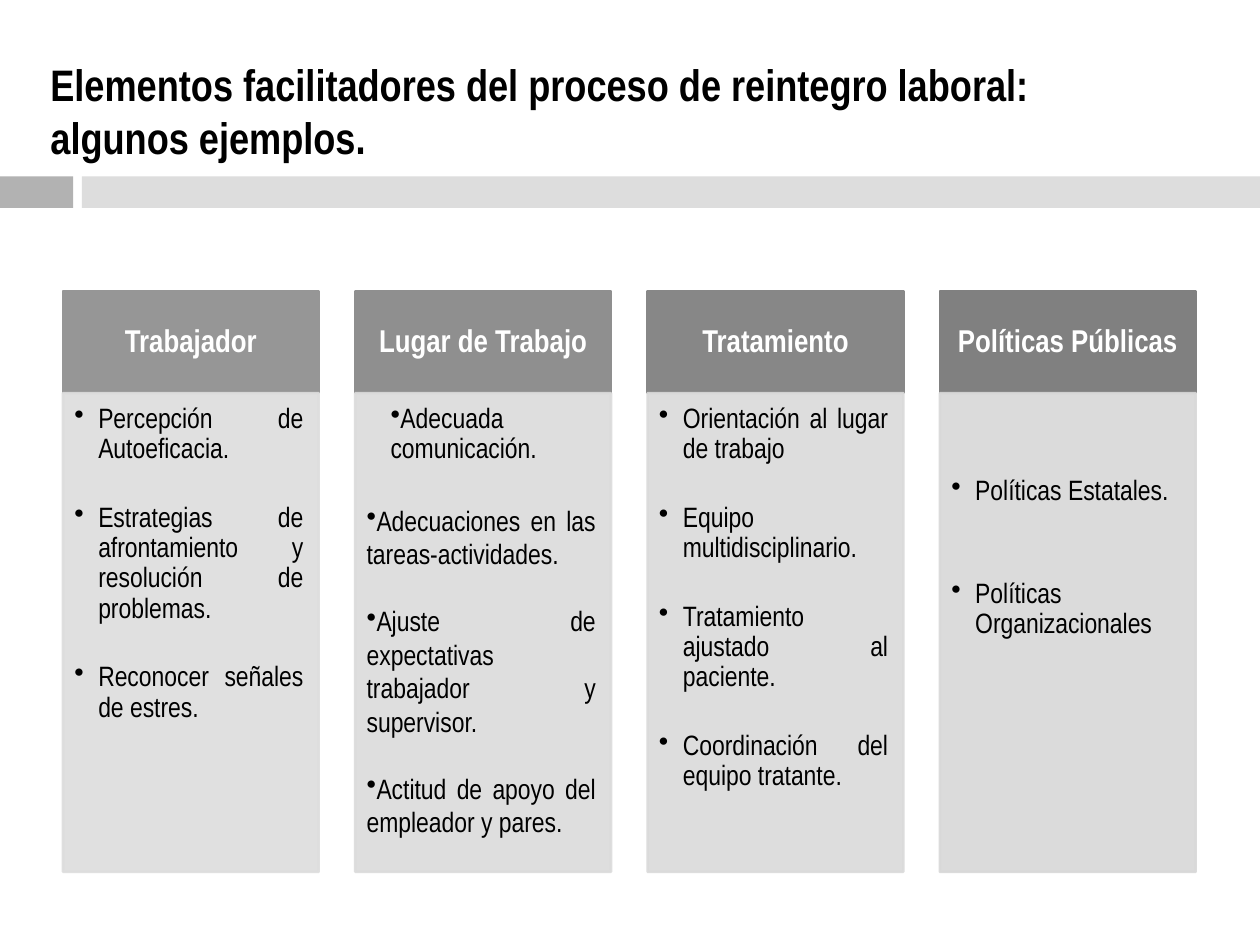
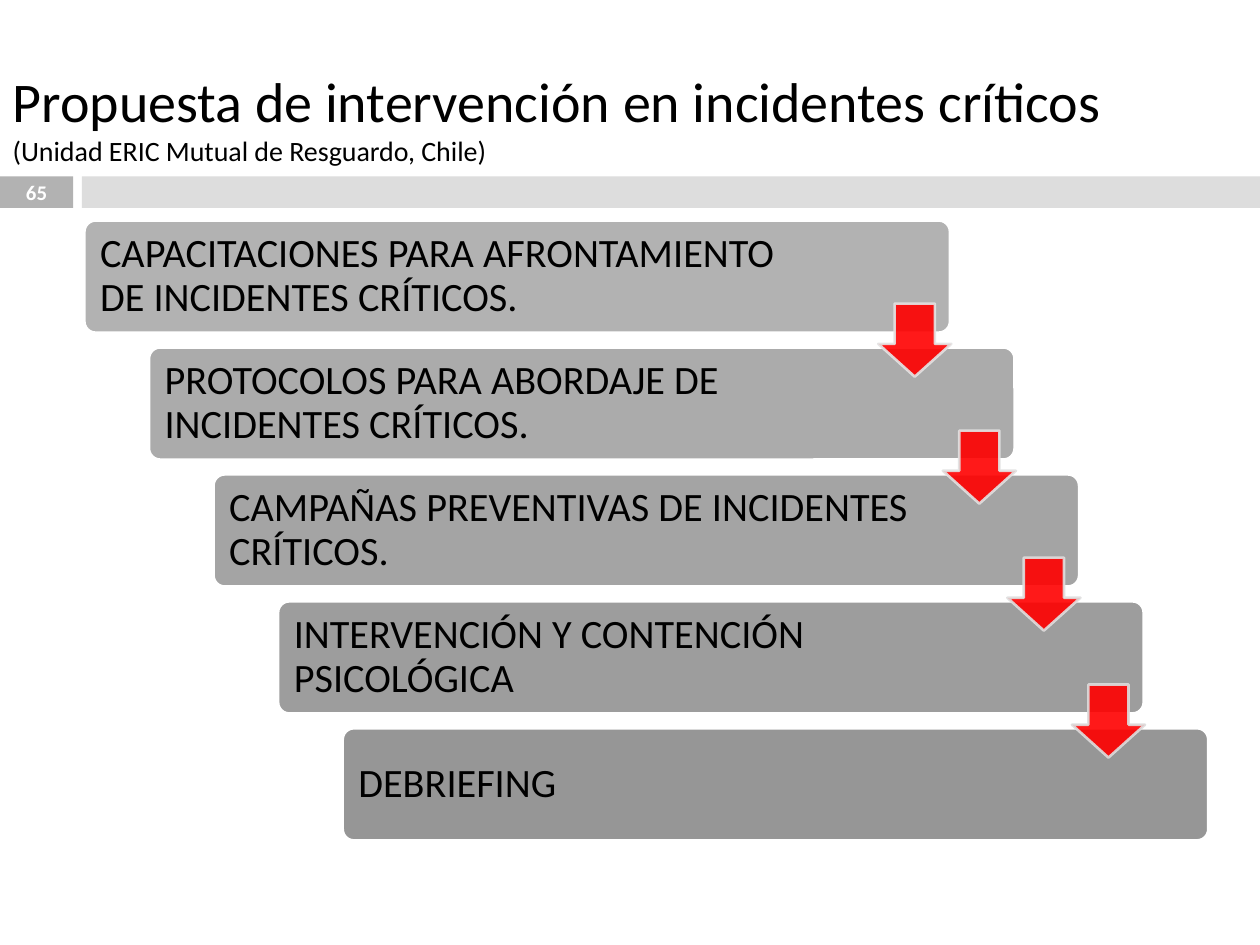
import pptx
import pptx.dml.color
import pptx.enum.shapes
import pptx.enum.text
import pptx.oxml.ns
import pptx.util
from lxml import etree

Inches = pptx.util.Inches
Pt = pptx.util.Pt
Align = pptx.enum.text.PP_ALIGN
Anchor = pptx.enum.text.MSO_ANCHOR
Preset = pptx.enum.shapes.MSO_SHAPE
qn = pptx.oxml.ns.qn

# Shared look
NARROW, SANS = "Arial Narrow", "Calibri"
BLACK, WHITE, RED = "000000", "FFFFFF", "FF0000"
BAND_DARK, BAND_LIGHT = "B2B2B2", "DDDDDD"
TITLE_ONLY = 5


def colour(hex_code):
    return pptx.dml.color.RGBColor.from_string(hex_code)


def style_font(font, name, size, hex_code=BLACK, bold=False):
    font.name, font.size, font.bold = name, Pt(size), bold
    font.color.rgb = colour(hex_code)


def add_block(slide, preset, box, fill, line=None, opacity=100):
    block = slide.shapes.add_shape(preset, *[Inches(n) for n in box])
    block.shadow.inherit = False
    block.fill.solid()
    block.fill.fore_color.rgb = colour(fill)
    if line:
        block.line.color.rgb = colour(line)
        block.line.width = Pt(1.5)
    else:
        block.line.fill.background()
    if opacity < 100:
        for paint in block._element.spPr.iter(qn("a:srgbClr")):
            etree.SubElement(paint, qn("a:alpha")).set("val", str(opacity * 1000))
    return block


def set_frame(frame, anchor, insets):
    frame.word_wrap = True
    frame.vertical_anchor = anchor
    (frame.margin_left, frame.margin_top,
     frame.margin_right, frame.margin_bottom) = [Inches(n) for n in insets]


def write_label(block, text, font, align, insets, spacing=0.9):
    set_frame(block.text_frame, Anchor.MIDDLE, insets)
    paragraph = block.text_frame.paragraphs[0]
    paragraph.text = text
    paragraph.alignment = align
    paragraph.line_spacing = spacing
    style_font(paragraph.font, *font)


def add_titled_slide(deck, title_box, title, font, number=None):
    """Slide with its title and the two-part band; returns the slide."""
    slide = deck.slides.add_slide(deck.slide_layouts[TITLE_ONLY])
    heading = slide.shapes.title
    heading.left, heading.top, heading.width, heading.height = [
        Inches(n) for n in title_box]
    frame = heading.text_frame
    frame.auto_size = pptx.enum.text.MSO_AUTO_SIZE.NONE
    set_frame(frame, Anchor.MIDDLE, (0.1, 0.05, 0.1, 0.05))
    paragraph = frame.paragraphs[0]
    paragraph.text = title
    paragraph.alignment = Align.LEFT
    style_font(paragraph.font, *font)

    number_tab = add_block(slide, Preset.RECTANGLE, (0, 1.4, 0.58, 0.25), BAND_DARK)
    add_block(slide, Preset.RECTANGLE, (0.65, 1.4, 9.35, 0.25), BAND_LIGHT)
    if number:
        write_label(number_tab, number, (SANS, 11.9, WHITE, True),
                    Align.CENTER, (0, 0, 0, 0), 1)
    return slide


# Columns of facilitating factors
def add_bullet(paragraph, text, left, hanging, spacing, before):
    paragraph.text = text
    properties = paragraph._p.get_or_add_pPr()
    properties.set("marL", str(Inches(left)))
    properties.set("indent", str(Inches(-hanging)))
    etree.SubElement(properties, qn("a:buChar")).set("char", "•")
    paragraph.alignment = Align.JUSTIFY
    paragraph.line_spacing = spacing
    paragraph.space_before = Pt(before)
    style_font(paragraph.font, NARROW, 16)


def add_factor_column(slide, box, factor):
    left, top, width, height = box
    head_height = 0.81
    head = add_block(slide, Preset.RECTANGLE, (left, top, width, head_height),
                     factor["head"], factor["head"])
    write_label(head, factor["name"], (NARROW, 18, WHITE, True),
                Align.CENTER, (0.14, 0.08, 0.14, 0.08))

    body = add_block(slide, Preset.RECTANGLE,
                     (left, top + head_height, width, height - head_height),
                     factor["body"], factor["body"], 90)
    frame = body.text_frame
    set_frame(frame, Anchor.TOP, (0.09, factor.get("inset", 0.09), 0.12, 0.14))
    hanging_style = (0.19, 0.19, 0.9, factor.get("gap", 22))
    styles = factor.get("styles", [hanging_style] * len(factor["items"]))
    for index, (item, style) in enumerate(zip(factor["items"], styles)):
        paragraph = frame.add_paragraph() if index else frame.paragraphs[0]
        left_indent, hanging, spacing, gap = style
        add_bullet(paragraph, item, left_indent, hanging, spacing, gap if index else 0)


FACTORS = [
    {"name": "Trabajador", "head": "969696", "body": "DDDDDD",
     "items": ["Percepción de Autoeficacia.",
               "Estrategias de afrontamiento y resolución de problemas.",
               "Reconocer señales de estres."]},
    {"name": "Lugar de Trabajo", "head": "8F8F8F", "body": "DBDBDB",
     "items": ["Adecuada comunicación.",
               "Adecuaciones en las tareas-actividades.",
               "Ajuste de expectativas trabajador y supervisor.",
               "Actitud de apoyo del empleador y pares."],
     # left indent, hanging indent, line spacing, gap before
     "styles": [(0.19, 0, 0.9, 0), (0, 0, 1, 22)] + [(0, 0, 1, 19)] * 2},
    {"name": "Tratamiento", "head": "878787", "body": "DADADA",
     "items": ["Orientación al lugar de trabajo",
               "Equipo multidisciplinario.",
               "Tratamiento ajustado al paciente.",
               "Coordinación del equipo tratante."]},
    {"name": "Políticas Públicas", "head": "808080", "body": "D8D8D8",
     "items": ["Políticas Estatales.", "Políticas Organizacionales"],
     "inset": 0.66, "gap": 41.5},
]


def build_factors(deck):
    slide = add_titled_slide(
        deck, (0.3, 0.25, 9, 1.25),
        "Elementos facilitadores del proceso de reintegro laboral: algunos ejemplos.",
        (NARROW, 25.2, BLACK, True))
    left, top, width, height = 0.5, 2.31, 8.99, 4.61
    column_width = 2.03
    pitch = (width - column_width) / (len(FACTORS) - 1)
    for index, factor in enumerate(FACTORS):
        add_factor_column(slide, (left + index * pitch, top, column_width, height), factor)


# Staircase of intervention steps
STEPS = [
    ("CAPACITACIONES PARA AFRONTAMIENTO DE INCIDENTES CRÍTICOS.", "B2B2B2"),
    ("PROTOCOLOS PARA ABORDAJE DE INCIDENTES CRÍTICOS.", "ABABAB"),
    ("CAMPAÑAS PREVENTIVAS DE INCIDENTES CRÍTICOS.", "A4A4A4"),
    ("INTERVENCIÓN Y CONTENCIÓN PSICOLÓGICA", "9D9D9D"),
    ("DEBRIEFING", "969696"),
]
ARROW_EDGES = ["E4E4E4", "E2E2E2", "DFDFDF", "DDDDDD"]


def add_staircase(slide, box):
    left, top, width, height = box
    step_width, step_height, arrow_side = 6.87, 0.89, 0.58
    shift = (width - step_width) / (len(STEPS) - 1)
    drop = (height - step_height) / (len(STEPS) - 1)
    for index, (text, fill) in enumerate(STEPS):
        step = add_block(slide, Preset.ROUNDED_RECTANGLE,
                         (left + index * shift, top + index * drop,
                          step_width, step_height), fill, WHITE)
        step.adjustments[0] = 0.1
        write_label(step, text, (SANS, 23), Align.LEFT, (0.1, 0.1, 1.15, 0.1))
    for index, edge in enumerate(ARROW_EDGES):
        arrow = add_block(slide, Preset.DOWN_ARROW,
                          (left + index * shift + step_width - arrow_side + 0.01,
                           top + index * drop + 0.66, arrow_side, arrow_side),
                          RED, edge, 90)
        arrow.adjustments[0], arrow.adjustments[1] = 0.55, 0.45


def build_intervention(deck):
    slide = add_titled_slide(
        deck, (0, 0.3, 9, 1.25),
        "Propuesta de intervención en incidentes críticos\v",
        (SANS, 32), "65")
    source = slide.shapes.title.text_frame.paragraphs[0].add_run()
    source.text = "(Unidad ERIC Mutual de Resguardo, Chile)"
    source.font.size = Pt(16)
    add_staircase(slide, (0.67, 1.75, 8.92, 4.92))


def main():
    deck = pptx.Presentation()
    deck.slide_width, deck.slide_height = Inches(10), Inches(7.5)
    build_factors(deck)
    build_intervention(deck)
    deck.save("out.pptx")


if __name__ == "__main__":
    main()
